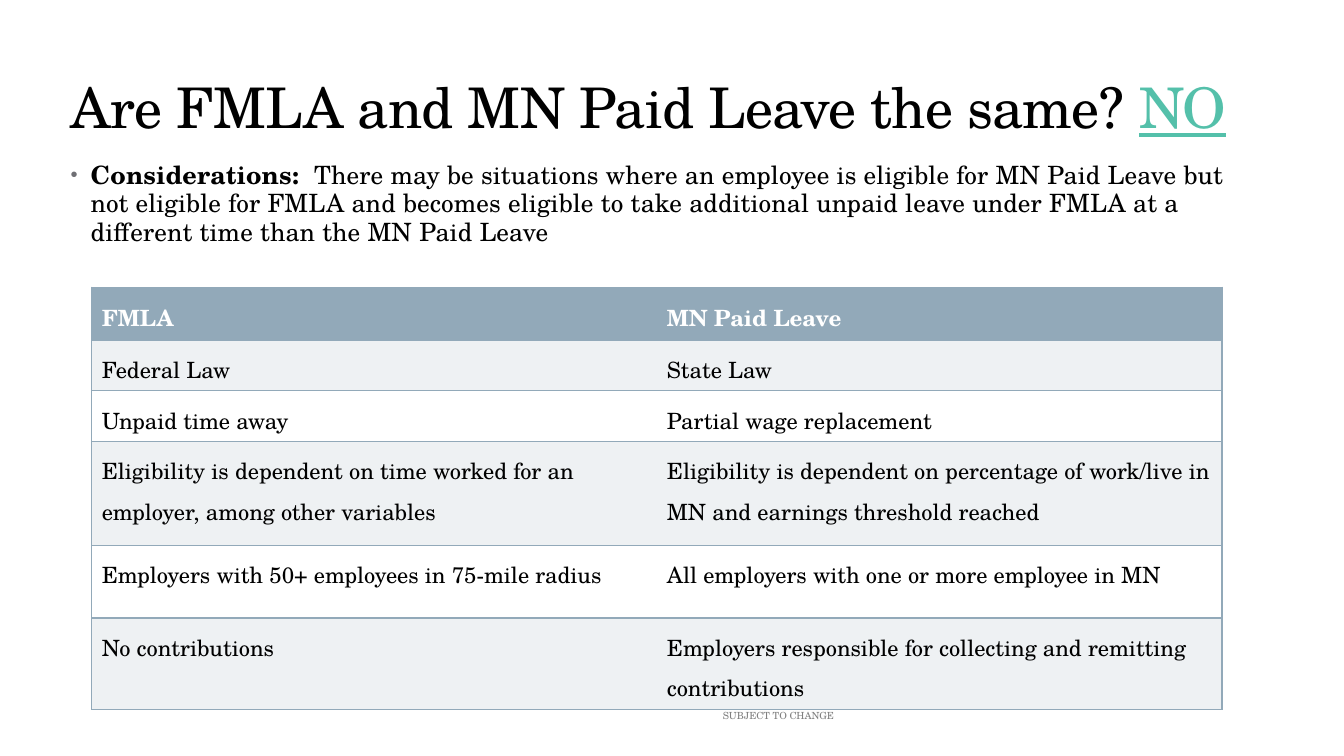
from lxml.etree import SubElement
from pptx import Presentation
from pptx.dml.color import RGBColor
from pptx.enum.text import MSO_ANCHOR, MSO_AUTO_SIZE, PP_ALIGN
from pptx.oxml.ns import qn
from pptx.util import Inches, Pt

FONT = "TeX Gyre Schola"
BLACK = RGBColor(0x00, 0x00, 0x00)
WHITE = RGBColor(0xFF, 0xFF, 0xFF)
TEAL = RGBColor(0x54, 0xC0, 0xAA)
STEEL = RGBColor(0x92, 0xA9, 0xB9)
BAND = RGBColor(0xEE, 0xF1, 0xF3)
BULLET = RGBColor(0x6F, 0x6F, 0x74)
GRAY = RGBColor(0x80, 0x80, 0x80)


def add_run(p, text, size, color, bold=False, spacing=0):
    r = p.add_run()
    r.text = text
    r.font.name = FONT
    r.font.size = Pt(size)
    r.font.bold = bold
    r.font.color.rgb = color
    if spacing:
        r._r.get_or_add_rPr().set("spc", str(spacing))
    return r


def set_border(cell, side, color=None):
    ln = SubElement(cell._tc.get_or_add_tcPr(), qn(f"a:ln{side}"), w=str(Pt(1)))
    if color is None:
        SubElement(ln, qn("a:noFill"))
    else:
        fill = SubElement(ln, qn("a:solidFill"))
        SubElement(fill, qn("a:srgbClr"), val=str(color))


prs = Presentation()
prs.slide_width, prs.slide_height = Inches(13.33), Inches(7.5)
s = prs.slides.add_slide(prs.slide_layouts[1])
title, body = s.shapes.title, s.placeholders[1]

# Title
title.left, title.top = Inches(0.6), Inches(0.25)
title.width, title.height = Inches(12), Inches(1.2)
tf = title.text_frame
tf.auto_size = MSO_AUTO_SIZE.NONE
tf.vertical_anchor = MSO_ANCHOR.BOTTOM
p = tf.paragraphs[0]
p.alignment = PP_ALIGN.LEFT
p.line_spacing = 0.9
add_run(p, "Are FMLA and MN Paid Leave the same? ", 40, BLACK, spacing=-50)
add_run(p, "NO", 40, TEAL, spacing=-50).font.underline = True

# Considerations bullet
body.left, body.top = Inches(0.6), Inches(1.55)
body.width, body.height = Inches(12), Inches(1.9)
tf = body.text_frame
tf.auto_size = MSO_AUTO_SIZE.NONE
p = tf.paragraphs[0]
p.line_spacing = 0.95
p.space_before, p.space_after = Pt(0), Pt(2)
pPr = p._p.get_or_add_pPr()
pPr.set("marL", str(Inches(0.2)))
pPr.set("indent", str(-Inches(0.2)))
SubElement(SubElement(pPr, qn("a:buClr")), qn("a:srgbClr"), val=str(BULLET))
SubElement(pPr, qn("a:buSzPct"), val="80000")
SubElement(pPr, qn("a:buChar"), char="•")
add_run(p, "Considerations:  ", 18, BLACK, bold=True, spacing=10)
add_run(p, "There may be situations where an employee is eligible for MN Paid Leave "
        "but not eligible for FMLA and becomes eligible to take additional unpaid "
        "leave under FMLA at a different time than the MN Paid Leave",
        18, BLACK, spacing=10)

# Comparison table: row height, FMLA, MN Paid Leave
rows = [
    (0.46, "FMLA", "MN Paid Leave"),
    (0.46, "Federal Law", "State Law"),
    (0.46, "Unpaid time away", "Partial wage replacement"),
    (1.03, "Eligibility is dependent on time worked for an employer, among other variables",
     "Eligibility is dependent on percentage of work/live in MN and earnings threshold reached"),
    (0.72, "Employers with 50+ employees in 75-mile radius",
     "All employers with one or more employee in MN"),
    (0.72, "No contributions",
     "Employers responsible for collecting and remitting contributions"),
]
table = s.shapes.add_table(len(rows), 2, Inches(0.91), Inches(2.85),
                           Inches(11.21), Inches(3.87)).table
table.horz_banding = False
for column in table.columns:
    column.width = Inches(5.605)
for i, (height, *texts) in enumerate(rows):
    table.rows[i].height = Inches(height)
    for j, text in enumerate(texts):
        cell = table.cell(i, j)
        set_border(cell, "L", STEEL if j == 0 else None)
        set_border(cell, "R", STEEL if j == 1 else None)
        set_border(cell, "T", STEEL)
        set_border(cell, "B", STEEL)
        cell.fill.solid()
        cell.fill.fore_color.rgb = STEEL if i == 0 else BAND if i % 2 else WHITE
        p = cell.text_frame.paragraphs[0]
        p.line_spacing = 1.24
        add_run(p, text, 16, WHITE if i == 0 else BLACK, bold=i == 0)

# Footer note
sp = s.shapes.add_textbox(Inches(6.07), Inches(6.99), Inches(2.3), Inches(0.22))
tf = sp.text_frame
tf.word_wrap = True
tf.auto_size = MSO_AUTO_SIZE.SHAPE_TO_FIT_TEXT
p = tf.paragraphs[0]
p.alignment = PP_ALIGN.RIGHT
add_run(p, "SUBJECT TO CHANGE", 7, GRAY)

prs.save("out.pptx")
